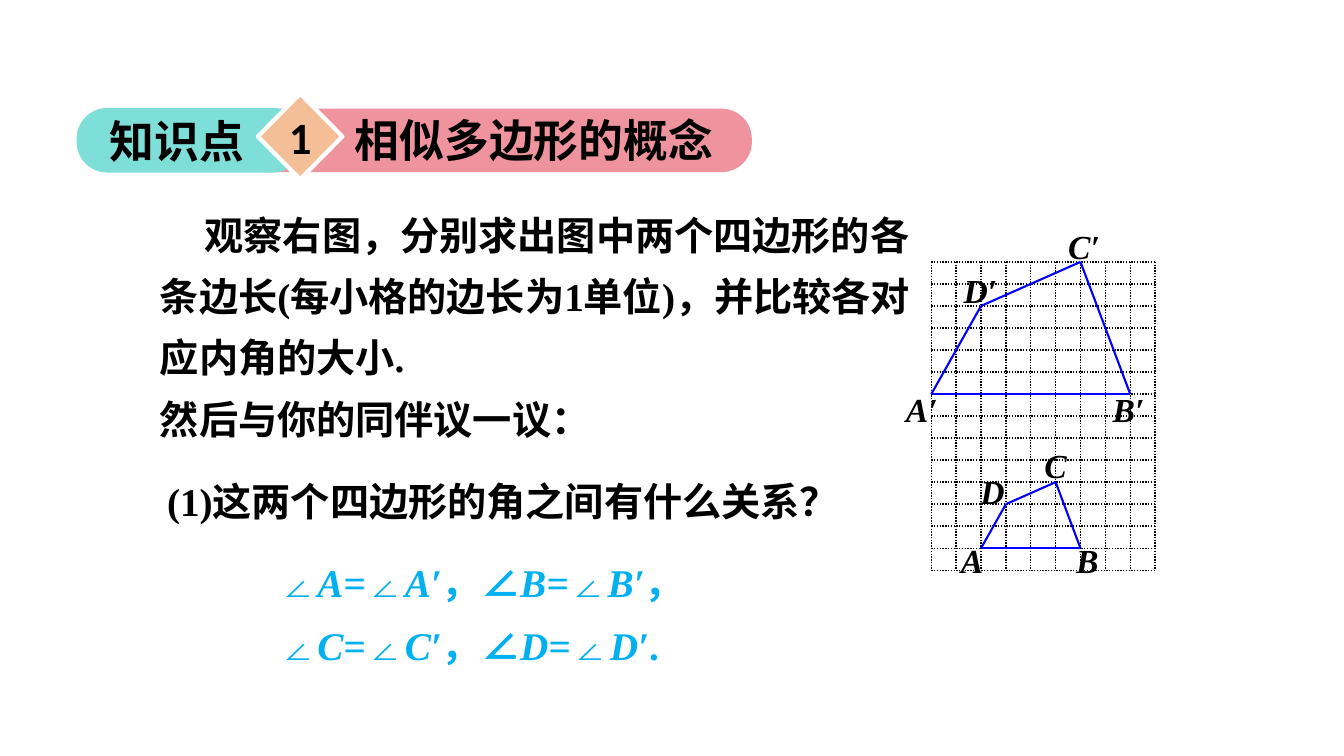
from pptx import Presentation
from pptx import util as u
from pptx.dml.color import RGBColor
from pptx.enum import dml, shapes, text
from pptx.oxml.ns import qn
from lxml import etree

BLACK = RGBColor(0x00, 0x00, 0x00)
WHITE = RGBColor(0xFF, 0xFF, 0xFF)
TEAL = RGBColor(0x7D, 0xDF, 0xD7)
PINK = RGBColor(0xEF, 0x94, 0x9E)
PEACH = RGBColor(0xF4, 0xBE, 0x96)
EDGE = RGBColor(0x00, 0x00, 0xFF)
ANSWER = RGBColor(0x00, 0xB0, 0xF0)

SANS, SERIF, DIGIT = "Noto Sans CJK SC", "Times New Roman", "Calibri"
HEADING = {"name": SANS, "size": u.Pt(32), "bold": True}
NUMBER = {"name": DIGIT, "size": u.Pt(32), "bold": True}
BODY = {"name": SERIF, "size": u.Pt(28), "bold": True}
VERTEX = {"name": SERIF, "size": u.Pt(24), "bold": True, "italic": True}

COLUMNS, ROWS = 9, 14
LARGE = [("A′", 0, 6, -0.89, -0.25), ("B′", 8, 6, -0.69, -0.25),
         ("C′", 6, 0, -0.56, -1.04), ("D′", 2, 2, -0.69, -1.04)]
SMALL = [("A", 2, 13, -0.76, -0.33), ("B", 6, 13, -0.36, -0.33),
         ("C", 5, 10, -0.53, -1.07), ("D", 3, 11, -0.89, -0.97)]


def add_span(para, words, style, colour=BLACK, **extra):
    """Add one run with the given font values."""
    span = para.add_run()
    span.text = words
    for key, value in {**style, **extra}.items():
        setattr(span.font, key, value)
    span.font.color.rgb = colour
    east = etree.SubElement(span.font._element, qn("a:ea"))
    east.set("typeface", SANS)


def add_frame(page, box, wrap=True):
    """Add an empty text box and return its text frame."""
    frame = page.shapes.add_textbox(*map(u.Cm, box)).text_frame
    frame.word_wrap = wrap
    return frame


def add_block(page, kind, box, colour):
    """Add a flat filled shape without an outline."""
    block = page.shapes.add_shape(kind, *map(u.Cm, box))
    block.shadow.inherit = False
    block.fill.solid()
    block.fill.fore_color.rgb = colour
    block.line.fill.background()
    return block


def add_line(page, start, end, colour, width, dash=None):
    """Draw a straight line between two points in centimetres."""
    line = page.shapes.add_connector(shapes.MSO_CONNECTOR.STRAIGHT,
                                     *map(u.Cm, (*start, *end)))
    line.line.color.rgb = colour
    line.line.width = u.Pt(width)
    if dash:
        line.line.dash_style = dash
    etree.SubElement(line._element.spPr, qn("a:effectLst"))


def draw_header(page, left, top):
    """Draw the topic banner with its number diamond."""
    rounded = shapes.MSO_SHAPE.ROUNDED_RECTANGLE
    for box, colour in [((left + 3.91, top + 0.38, 13.11, 1.6), PINK),
                        ((left, top + 0.36, 5.72, 1.63), TEAL)]:
        add_block(page, rounded, box, colour).adjustments[0] = 0.477
    for box, words, wrap in [
            ((left + 0.58, top + 0.38, 4.04, 1.63), "知识点", False),
            ((left + 6.76, top + 0.36, 10.85, 1.63), "相似多边形的概念", True)]:
        add_span(add_frame(page, box, wrap).paragraphs[0], words, HEADING)
    diamond = add_block(page, shapes.MSO_SHAPE.DIAMOND,
                        (left + 4.57, top, 2.13, 2.16), PEACH)
    diamond.line.color.rgb = WHITE
    diamond.line.width = u.Pt(3)
    frame = diamond.text_frame
    frame.word_wrap = False
    frame.vertical_anchor = text.MSO_ANCHOR.MIDDLE
    frame.paragraphs[0].alignment = text.PP_ALIGN.CENTER
    add_span(frame.paragraphs[0], "1", NUMBER)


def draw_grid(page, left, top, width, height):
    """Draw the dotted grid with both labelled quadrilaterals."""
    def point(column, row):
        """Turn a grid position into centimetres."""
        return left + column * width / COLUMNS, top + row * height / ROWS

    rules = [((c, 0), (c, ROWS)) for c in range(COLUMNS + 1)]
    rules += [((0, r), (COLUMNS, r)) for r in range(ROWS + 1)]
    for start, end in rules:
        add_line(page, point(*start), point(*end), BLACK, 1,
                 dml.MSO_LINE.ROUND_DOT)
    for corners in (LARGE, SMALL):
        for first, second in zip(corners, corners[1:] + corners[:1]):
            add_line(page, point(*first[1:3]), point(*second[1:3]), EDGE, 1.5)
    for name, column, row, across, down in LARGE + SMALL:
        x, y = point(column, row)
        frame = add_frame(page, (x + across, y + down, 1.4, 1.27))
        frame.margin_right = 0
        add_span(frame.paragraphs[0], name, VERTEX)


def write_question(page, box, lines, indent=0):
    """Write black paragraphs, the first with an optional indent."""
    frame = add_frame(page, box)
    for index, words in enumerate(lines):
        para = frame.add_paragraph() if index else frame.paragraphs[0]
        para.line_spacing = 1.3
        add_span(para, words, BODY)
    if indent:
        frame.paragraphs[0]._p.get_or_add_pPr().set("indent", str(u.Cm(indent)))


def write_answer(page, box, parts):
    """Write one line of angle equalities, letters in italics."""
    para = add_frame(page, box).paragraphs[0]
    para.line_spacing = 1.5
    for index, words in enumerate(parts):
        add_span(para, words, BODY, ANSWER, italic=index % 2 == 1)


def main():
    """Build the slide and save it."""
    deck = Presentation()
    deck.slide_width, deck.slide_height = u.Cm(33.87), u.Cm(19.05)
    page = deck.slides.add_slide(deck.slide_layouts[6])
    draw_header(page, 1.93, 2.36)
    draw_grid(page, 23.47, 6.6, 5.64, 7.77)
    write_question(page, (3.78, 4.85, 19.48, 6.32), [
        "观察右图，分别求出图中两个四边形的各条边长(每小格的边长为1单位)，并比较各对应内角的大小.",
        "然后与你的同伴议一议："], indent=1.13)
    write_question(page, (3.96, 11.56, 18.14, 1.65),
                   ["(1)这两个四边形的角之间有什么关系？"])
    write_answer(page, (6.76, 13.34, 12.32, 1.83),
                 ["∠", "A=", "∠", "A′", "，∠", "B=", "∠", "B′", "，"])
    write_answer(page, (6.76, 14.94, 11.2, 1.83),
                 ["∠", "C=", "∠", "C′", "，∠", "D=", "∠", "D′", "."])
    deck.save("out.pptx")


if __name__ == "__main__":
    main()
